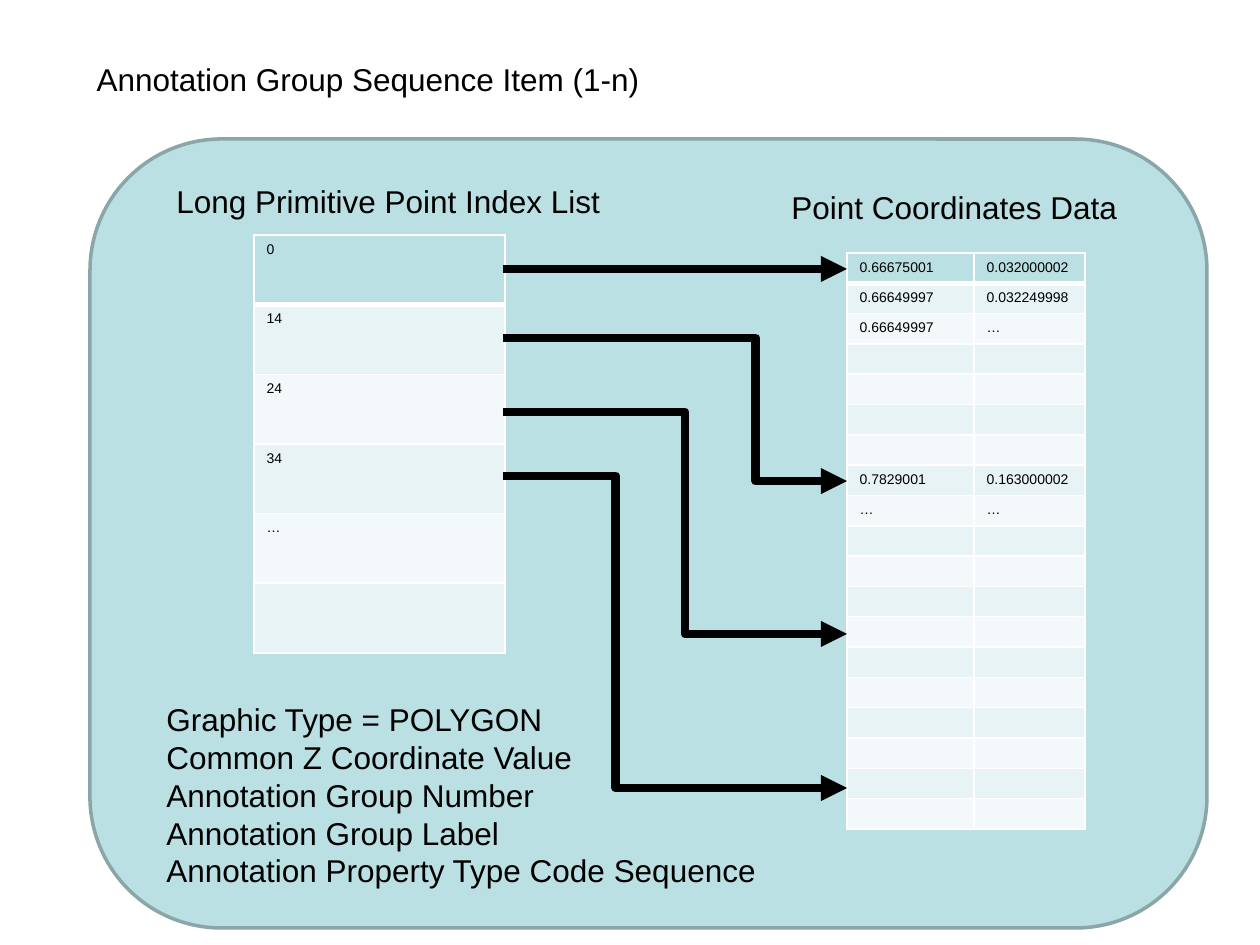
from lxml import etree
from pptx import Presentation
from pptx.dml.color import RGBColor
from pptx.enum.shapes import MSO_CONNECTOR, MSO_SHAPE
from pptx.enum.text import MSO_ANCHOR, MSO_AUTO_SIZE, PP_ALIGN
from pptx.oxml.ns import qn
from pptx.util import Emu, Pt

ELBOW = MSO_CONNECTOR.ELBOW
ROUNDED = MSO_SHAPE.ROUNDED_RECTANGLE
TOP = MSO_ANCHOR.TOP
LEFT = PP_ALIGN.LEFT
FIT_SHAPE = MSO_AUTO_SIZE.SHAPE_TO_FIT_TEXT

PX_PER_INCH = 126
COLORS = {
    "panel": "BBE0E3",
    "panel_line": "8AA6A8",
    "odd_row": "E7F3F4",
    "even_row": "F3F9FA",
    "border": "FFFFFF",
    "ink": "000000",
}
LABEL_SIZE, CELL_SIZE = 18, 8

INDEX_ROWS = [["0"], ["14"], ["24"], ["34"], ["…"], [""]]
COORDINATE_ROWS = (
    [["0.66675001", "0.032000002"], ["0.66649997", "0.032249998"], ["0.66649997", "…"]]
    + [["", ""]] * 4
    + [["0.7829001", "0.163000002"], ["…", "…"]]
    + [["", ""]] * 10
)
ATTRIBUTES = [
    "Graphic Type = POLYGON",
    "Common Z Coordinate Value",
    "Annotation Group Number",
    "Annotation Group Label",
    "Annotation Property Type Code Sequence",
]

# Arrows run from the index list to the coordinates: start y, bend x, end y
ARROW_LEFT, ARROW_RIGHT = 503, 847
ARROWS = [(269, 675, 269), (338, 756, 481), (412, 685, 634), (476, 616, 788)]


def px(value):
    return Emu(round(value * 914400 / PX_PER_INCH))


def color(name):
    return RGBColor.from_string(COLORS[name])


def set_attributes(target, values):
    for name, value in values.items():
        setattr(target, name, value)


def format_font(font, size):
    set_attributes(font, {"name": "Arial", "size": Pt(size), "bold": False})
    font.color.rgb = color("ink")


def fill_text(shape, lines):
    frame = shape.text_frame
    set_attributes(frame, {"text": "\n".join(lines), "word_wrap": False,
                           "auto_size": FIT_SHAPE, "vertical_anchor": TOP})
    for paragraph in frame.paragraphs:
        paragraph.alignment = LEFT
        for run in paragraph.runs:
            format_font(run.font, LABEL_SIZE)


def add_label(slide, box, lines):
    fill_text(slide.shapes.add_textbox(*map(px, box)), lines)


def place_title(slide, box, text):
    title = slide.shapes.title
    set_attributes(title, dict(zip(("left", "top", "width", "height"), map(px, box))))
    fill_text(title, [text])


def add_panel(slide, box):
    panel = slide.shapes.add_shape(ROUNDED, *map(px, box))
    panel.shadow.inherit = False
    panel.fill.solid()
    panel.fill.fore_color.rgb = color("panel")
    panel.line.color.rgb = color("panel_line")
    panel.line.width = Pt(2)


def add_borders(cell, widths):
    properties = cell._tc.get_or_add_tcPr()
    for side, width in widths.items():
        line = etree.SubElement(properties, qn(f"a:ln{side}"), w=str(Pt(width)))
        fill = etree.SubElement(line, qn("a:solidFill"))
        etree.SubElement(fill, qn("a:srgbClr"), val=COLORS["border"])


def format_cell(cell, text, row):
    # A thick rule separates the first row from the rest
    add_borders(cell, {"L": 1, "R": 1, "T": 3 if row == 1 else 1, "B": 3 if row == 0 else 1})
    fill_name = "panel" if row == 0 else ("odd_row" if row % 2 else "even_row")
    cell.fill.solid()
    cell.fill.fore_color.rgb = color(fill_name)
    paragraph = cell.text_frame.paragraphs[0]
    if text:
        run = paragraph.add_run()
        run.text = text
        format_font(run.font, CELL_SIZE)
    else:
        # Empty cells need a small end mark so that rows keep their height
        etree.SubElement(paragraph._p, qn("a:endParaRPr"), sz=str(CELL_SIZE * 100))


def add_data_table(slide, left, top, column_widths, height, rows):
    box = (left, top, sum(column_widths), height)
    table = slide.shapes.add_table(len(rows), len(column_widths), *map(px, box)).table
    for column, width in zip(table.columns, column_widths):
        column.width = px(width)
    for row_number, texts in enumerate(rows):
        table.rows[row_number].height = px(height / len(rows))
        for column_number, text in enumerate(texts):
            format_cell(table.cell(row_number, column_number), text, row_number)


def add_arrow(slide, start_y, bend_x, end_y):
    ends = (ARROW_LEFT, start_y, ARROW_RIGHT, end_y)
    arrow = slide.shapes.add_connector(ELBOW, *map(px, ends))
    arrow.line.color.rgb = color("ink")
    arrow.line.width = Pt(5)
    properties = arrow._element.spPr
    etree.SubElement(arrow.line._get_or_add_ln(), qn("a:tailEnd"), type="triangle")
    etree.SubElement(properties, qn("a:effectLst"))
    bend = round((bend_x - ARROW_LEFT) / (ARROW_RIGHT - ARROW_LEFT) * 100000)
    adjustments = properties.find(qn("a:prstGeom")).find(qn("a:avLst"))
    etree.SubElement(adjustments, qn("a:gd"), name="adj1", fmla=f"val {bend}")


def main():
    presentation = Presentation()
    presentation.slide_width = px(1260)
    presentation.slide_height = px(945)
    slide = presentation.slides.add_slide(presentation.slide_layouts[5])

    # Title and background panel
    place_title(slide, (84, 54, 573, 50), "Annotation Group Sequence Item (1-n)")
    add_panel(slide, (90, 139, 1117, 789))

    # Index list and coordinates
    add_data_table(slide, 254, 235, [251], 418, INDEX_ROWS)
    add_data_table(slide, 847, 253, [127, 111], 576, COORDINATE_ROWS)

    # Table headings and group attributes
    add_label(slide, (164, 176, 454, 50), ["Long Primitive Point Index List"])
    add_label(slide, (779, 182, 354, 50), ["Point Coordinates Data"])
    add_label(slide, (154, 694, 620, 204), ATTRIBUTES)

    # Links from each index to its first coordinate
    for arrow in ARROWS:
        add_arrow(slide, *arrow)

    presentation.save("out.pptx")


if __name__ == "__main__":
    main()
